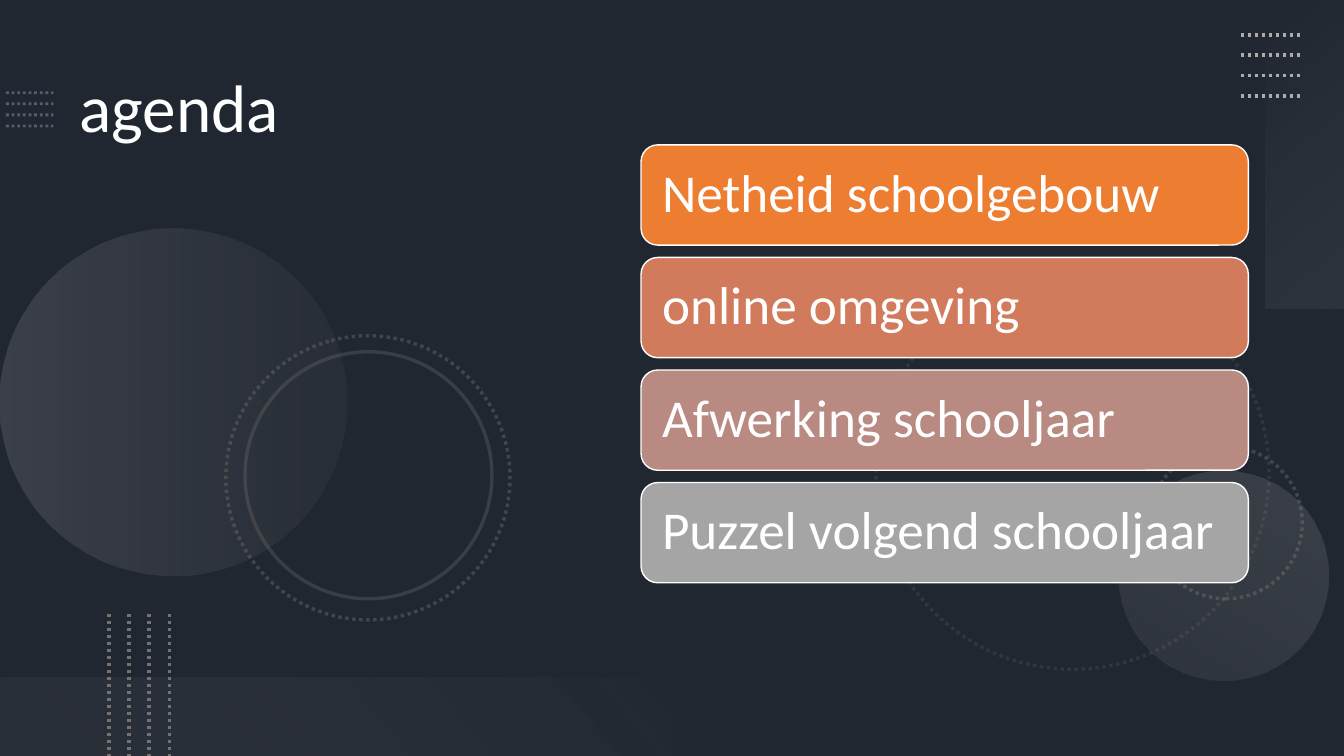
from dataclasses import dataclass

from lxml import etree
from pptx import Presentation
from pptx.dml.color import RGBColor
from pptx.enum.dml import MSO_LINE
from pptx.enum.shapes import MSO_CONNECTOR, MSO_SHAPE
from pptx.enum.text import MSO_ANCHOR, PP_ALIGN
from pptx.oxml.ns import qn
from pptx.util import Pt

DOTTED = MSO_LINE.ROUND_DOT
STRAIGHT = MSO_CONNECTOR.STRAIGHT
RECTANGLE = MSO_SHAPE.RECTANGLE
OVAL = MSO_SHAPE.OVAL
ROUNDED = MSO_SHAPE.ROUNDED_RECTANGLE
MIDDLE, TOP = MSO_ANCHOR.MIDDLE, MSO_ANCHOR.TOP
LEFT = PP_ALIGN.LEFT


@dataclass(frozen=True)
class Theme:
    font: str = "Calibri"
    title_size: int = 48
    card_size: int = 38
    background: str = "44546A"
    shade: str = "000000"
    text: str = "FFFFFF"
    accent: str = "8497B0"
    gray: str = "767171"
    silver: str = "AFABAB"
    pale: str = "F5F5F5"
    cards: tuple = ("ED7D31", "D17B5C", "B98A82", "A5A5A5")


THEME = Theme()
TOPICS = ("Netheid schoolgebouw", "online omgeving",
          "Afwerking schooljaar", "Puzzel volgend schooljaar")


def set_alpha(color_format_parent, percent):
    """Make the colour inside a solid fill partly transparent."""
    color = color_format_parent.find(".//" + qn("a:srgbClr"))
    etree.SubElement(color, qn("a:alpha"), val=str(percent * 1000))


def style_line(line, color, width, alpha=100, dotted=True):
    line.color.rgb = RGBColor.from_string(color)
    line.width = Pt(width)
    if dotted:
        line.dash_style = DOTTED
    set_alpha(line._get_or_add_ln(), alpha)


def add_shape(slide, kind, box, rotation=0):
    shape = slide.shapes.add_shape(kind, *(Pt(length) for length in box))
    shape.rotation = rotation
    shape.shadow.inherit = False
    shape.line.fill.background()
    return shape


def set_gradient(shape, stops, angle):
    """Stops are (position, colour, opacity), all in percent."""
    gradient = etree.Element(qn("a:gradFill"), rotWithShape="1")
    stop_list = etree.SubElement(gradient, qn("a:gsLst"))
    for position, color, alpha in stops:
        stop = etree.SubElement(stop_list, qn("a:gs"), pos=str(position * 1000))
        value = etree.SubElement(stop, qn("a:srgbClr"), val=color)
        etree.SubElement(value, qn("a:alpha"), val=str(alpha * 1000))
    etree.SubElement(gradient, qn("a:lin"), ang=str(angle * 60000), scaled="0")
    shape._element.spPr.find(qn("a:prstGeom")).addnext(gradient)


def write_text(shape, text, size, anchor, inset_x, inset_y):
    frame = shape.text_frame
    frame.word_wrap = True
    frame.vertical_anchor = anchor
    frame.margin_left = frame.margin_right = Pt(inset_x)
    frame.margin_top = frame.margin_bottom = Pt(inset_y)
    frame.text = text
    paragraph = frame.paragraphs[0]
    paragraph.alignment = LEFT
    paragraph.line_spacing = 0.9
    font = paragraph.runs[0].font
    font.name, font.size = THEME.font, Pt(size)
    font.color.rgb = RGBColor.from_string(THEME.text)


def add_dotted_lines(slide, box, color, width, alpha=100, vertical=False):
    """Spread four dotted lines evenly over the box."""
    left, top, box_width, height = box
    for index in range(4):
        share = index / 3
        if vertical:
            x = left + box_width * share
            ends = (x, top, x, top + height)
        else:
            y = top + height * share
            ends = (left, y, left + box_width, y)
        connector = slide.shapes.add_connector(STRAIGHT, *(Pt(end) for end in ends))
        style_line(connector.line, color, width, alpha)
        etree.SubElement(connector._element.spPr, qn("a:effectLst"))


def add_ring(slide, left, top, diameter, rotation, alpha, dotted=True):
    ring = add_shape(slide, OVAL, (left, top, diameter, diameter), rotation)
    ring.fill.background()
    style_line(ring.line, THEME.gray, 2.5, alpha, dotted)


def add_disc(slide, left, top, diameter, rotation, stops):
    disc = add_shape(slide, OVAL, (left, top, diameter, diameter), rotation)
    set_gradient(disc, stops, 90)


def add_backdrop(slide, width, height):
    # Dark shade over the slide background
    slide.background.fill.solid()
    slide.background.fill.fore_color.rgb = RGBColor.from_string(THEME.background)
    shade = add_shape(slide, RECTANGLE, (0, 0, width, height))
    shade.fill.solid()
    shade.fill.fore_color.rgb = RGBColor.from_string(THEME.shade)
    set_alpha(shade._element.spPr, 53)

    # Dots beside the title
    add_dotted_lines(slide, (4.3, 66.2, 33.8, 23.8), THEME.accent, 2, 50)

    # Rings and discs
    add_ring(slide, 625.7, 197.3, 280.8, 75, 20)
    add_ring(slide, 821.5, 319, 108.7, 270, 40)
    add_disc(slide, 0, 163.4, 247.7, 270,
             [(0, THEME.silver, 20), (100, THEME.gray, 10)])
    add_disc(slide, 799.2, 336.2, 149.8, 210,
             [(0, THEME.silver, 10), (100, THEME.silver, 20)])
    add_ring(slide, 161.3, 239.8, 203, 75, 40)
    add_ring(slide, 175, 251.3, 176.4, 75, 30, dotted=False)

    # Top right corner
    panel = add_shape(slide, RECTANGLE, (822.2, 82.1, 220.3, 56.2), 270)
    set_gradient(panel, [(0, THEME.pale, 0), (100, THEME.silver, 10)], 140)
    add_dotted_lines(slide, (886.3, 25, 43.2, 43.4), THEME.silver, 2.5)

    # Bottom left corner
    band = add_shape(slide, RECTANGLE, (0, height - 56.2, width / 2, 56.2), 180)
    set_gradient(band, [(10, THEME.gray, 10), (100, THEME.pale, 0)], 140)
    add_dotted_lines(slide, (77.8, 438.5, 43.2, height - 438.5),
                     THEME.gray, 2.5, vertical=True)


def add_title(slide, left, top, width, height):
    title = slide.shapes.add_textbox(Pt(left), Pt(top), Pt(width), Pt(height))
    write_text(title, "agenda", THEME.title_size, TOP, 7.2, 3.6)


def add_agenda(slide, left, top, width, height):
    gap = 8.8
    card_height = (height - gap * (len(TOPICS) - 1)) / len(TOPICS)
    for index, (topic, color) in enumerate(zip(TOPICS, THEME.cards)):
        card_top = top + index * (card_height + gap)
        card = add_shape(slide, ROUNDED, (left, card_top, width, card_height))
        card.fill.solid()
        card.fill.fore_color.rgb = RGBColor.from_string(color)
        style_line(card.line, THEME.text, 1, dotted=False)
        write_text(card, topic, THEME.card_size, MIDDLE, 11.5, 11.5)


def main():
    width, height = 960, 540
    presentation = Presentation()
    presentation.slide_width, presentation.slide_height = Pt(width), Pt(height)
    slide = presentation.slides.add_slide(presentation.slide_layouts[6])
    add_backdrop(slide, width, height)
    add_title(slide, 49.7, 49.7, 389.5, 434.2)
    add_agenda(slide, 457.9, 103.5, 433.8, 312.8)
    presentation.save("out.pptx")


if __name__ == "__main__":
    main()
